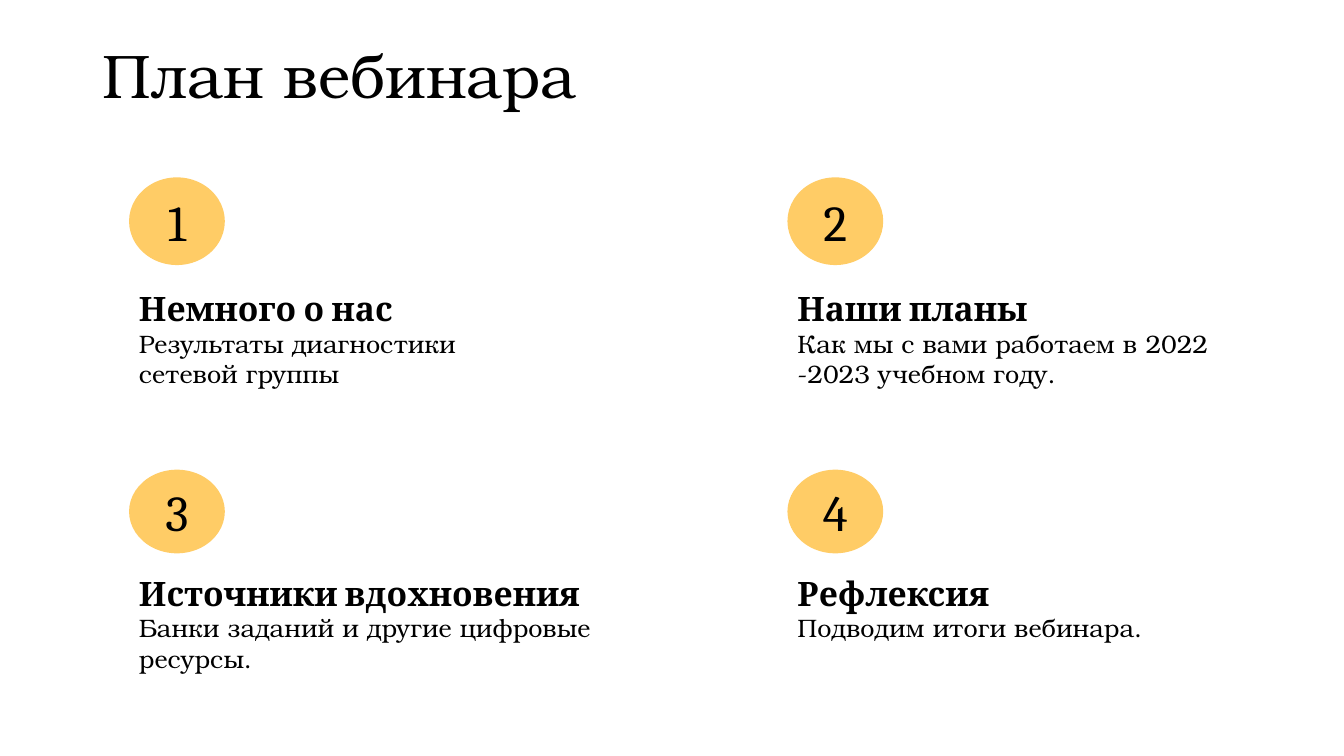
"""Build the webinar plan slide with four numbered topics."""
from dataclasses import dataclass

import pptx
import pptx.dml.color
import pptx.enum.shapes
import pptx.enum.text
import pptx.slide
import pptx.text.text
import pptx.util
from pptx.util import Inches

BLACK = pptx.dml.color.RGBColor(0x00, 0x00, 0x00)
GOLD = pptx.dml.color.RGBColor(0xFF, 0xCC, 0x66)
SERIF = "Cambria"
BODY = "TeX Gyre Bonum"
LEFTS = (1.28, 7.81)


@dataclass(frozen=True)
class Row:
    disc: float
    size: float
    text: float


@dataclass(frozen=True)
class Topic:
    head: str
    body: str
    width: float
    height: float


ROWS = (Row(1.76, 0.87, 2.81), Row(4.66, 0.83, 5.63))
TOPICS = (
    Topic("Немного о нас", "Результаты диагностики сетевой группы", 4.38, 1.41),
    Topic("Наши планы", "Как мы с вами работаем в 2022 -2023 учебном году.", 4.4, 1.41),
    Topic("Источники вдохновения", "Банки заданий и другие цифровые ресурсы.", 4.79, 1.41),
    Topic("Рефлексия", "Подводим итоги вебинара.", 4.25, 1.11),
)


def write(para: pptx.text.text._Paragraph, text: str, size: int,
          face: str, bold: bool = False) -> None:
    para.text = text
    font = para.font
    font.size = pptx.util.Pt(size)
    font.name = face
    font.bold = bold
    font.color.rgb = BLACK


def add_box(slide: pptx.slide.Slide, left: float, top: float,
            width: float, height: float) -> pptx.text.text.TextFrame:
    box = slide.shapes.add_textbox(
        Inches(left), Inches(top), Inches(width), Inches(height))
    box.text_frame.word_wrap = True
    return box.text_frame


def add_title(slide: pptx.slide.Slide) -> None:
    frame = add_box(slide, 0.92, 0.4, 11.5, 1.45)
    frame.auto_size = pptx.enum.text.MSO_AUTO_SIZE.NONE
    write(frame.paragraphs[0], "План вебинара", 44, BODY)
    frame.paragraphs[0].line_spacing = 0.9


def add_disc(slide: pptx.slide.Slide, left: float, row: Row, num: int) -> None:
    disc = slide.shapes.add_shape(
        pptx.enum.shapes.MSO_SHAPE.OVAL,
        Inches(left), Inches(row.disc), Inches(0.95), Inches(row.size))
    disc.shadow.inherit = False
    disc.fill.solid()
    disc.fill.fore_color.rgb = GOLD
    disc.line.fill.background()
    frame = disc.text_frame
    frame.vertical_anchor = pptx.enum.text.MSO_ANCHOR.MIDDLE
    para = frame.paragraphs[0]
    para.alignment = pptx.enum.text.PP_ALIGN.CENTER
    write(para, str(num), 36, SERIF)


def add_topic(slide: pptx.slide.Slide, left: float, row: Row, topic: Topic) -> None:
    frame = add_box(slide, left, row.text, topic.width, topic.height)
    frame.auto_size = pptx.enum.text.MSO_AUTO_SIZE.SHAPE_TO_FIT_TEXT
    write(frame.paragraphs[0], topic.head, 24, SERIF, True)
    write(frame.add_paragraph(), topic.body, 18, BODY)


def main() -> None:
    deck = pptx.Presentation()
    deck.slide_width = Inches(13.33)
    deck.slide_height = Inches(7.5)
    slide = deck.slides.add_slide(deck.slide_layouts[6])
    add_title(slide)
    for index, topic in enumerate(TOPICS):
        line, col = divmod(index, len(LEFTS))
        add_disc(slide, LEFTS[col], ROWS[line], index + 1)
        add_topic(slide, LEFTS[col], ROWS[line], topic)
    deck.save("out.pptx")


if __name__ == "__main__":
    main()
